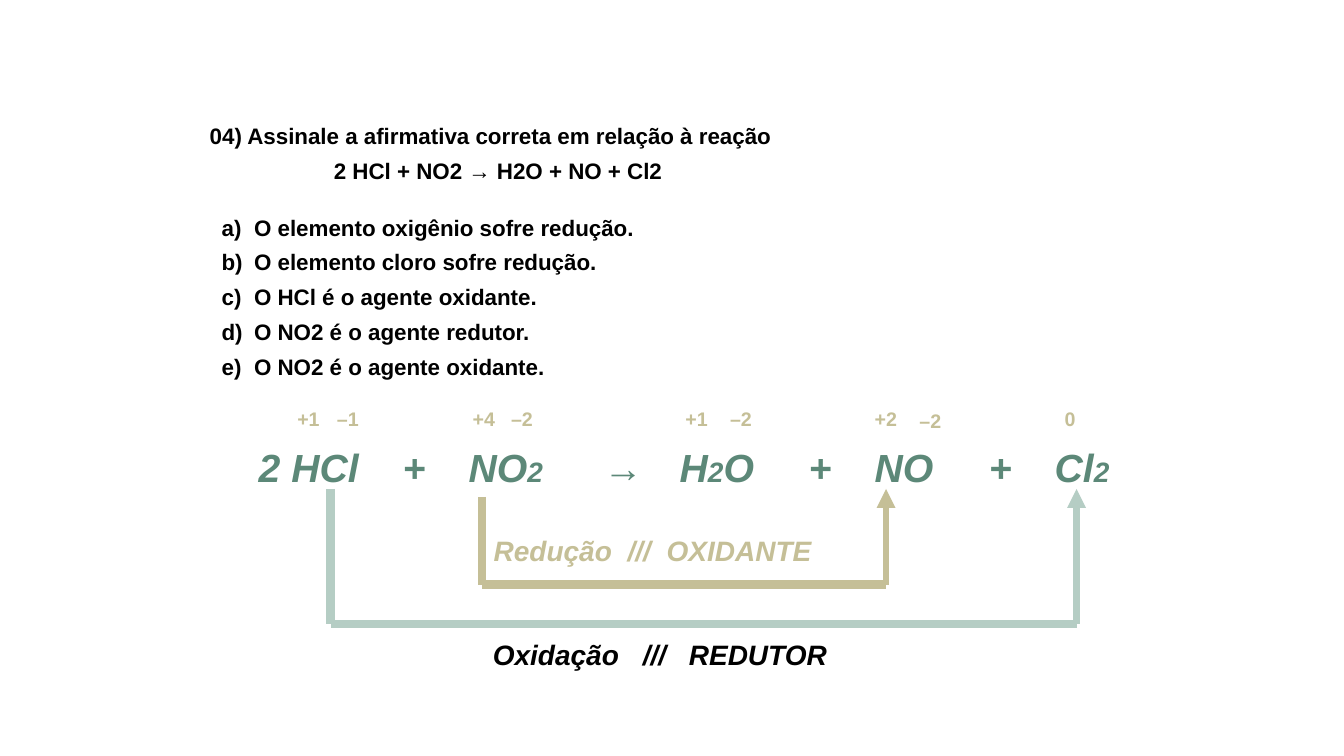
"""Build the redox exercise slide."""
from lxml import etree
from pptx import Presentation
from pptx.dml.color import RGBColor
from pptx.enum.shapes import MSO_CONNECTOR
from pptx.enum.text import MSO_ANCHOR, MSO_AUTO_SIZE, PP_ALIGN
from pptx.oxml.ns import qn
from pptx.util import Cm, Pt

STRAIGHT = MSO_CONNECTOR.STRAIGHT
MIDDLE = MSO_ANCHOR.MIDDLE
FIXED = MSO_AUTO_SIZE.NONE
LEFT, CENTER, JUSTIFY = PP_ALIGN.LEFT, PP_ALIGN.CENTER, PP_ALIGN.JUSTIFY

BLACK, GREEN, MINT, SAND = "000000", "5C8878", "B5CDC4", "C5BF97"

ASK = ["04) Assinale a afirmativa correta em relação à reação",
       "2 HCl + NO2 → H2O + NO + Cl2"]
CHOICES = ["a)\tO elemento oxigênio sofre redução.",
           "b)\tO elemento cloro sofre redução.",
           "c)\tO HCl é o agente oxidante.",
           "d)\tO NO2 é o agente redutor.",
           "e)\tO NO2 é o agente oxidante."]
TERMS = ["2 HCl\t+\tNO", "2", "\t", "→", "\tH", "2",
         "O\t+\tNO\t+\tCl", "2"]
STOPS = [3.63, 5.29, 8.69, 10.61, 13.86, 15.52, 18.4, 20.06]
CHARGES = [("+1", 7.24, 10.13), ("–1", 8.23, 10.13), ("+4", 11.66, 10.13),
           ("–2", 12.62, 10.13), ("+1", 17.02, 10.13), ("–2", 18.14, 10.13),
           ("+2", 21.79, 10.13), ("–2", 22.91, 10.18), ("0", 26.43, 10.13)]


def color(code):
    return RGBColor.from_string(code)


def style(para, size, code, align, space=1.0, italic=False):
    para.alignment = align
    para.line_spacing = space
    para.space_before = Pt(0)
    font = para.font
    font.name, font.size, font.bold, font.italic = "Arial", Pt(size), True, italic
    font.color.rgb = color(code)


def place(shape, left, top, width, height):
    shape.left, shape.top = Cm(left), Cm(top)
    shape.width, shape.height = Cm(width), Cm(height)


def fill_holder(holder, lines, box):
    place(holder, *box)
    frame = holder.text_frame
    frame.text = "\n".join(lines)
    frame.auto_size = FIXED
    frame.vertical_anchor = MIDDLE
    for para in frame.paragraphs:
        style(para, 16, BLACK, JUSTIFY, 1.3)


def indent(para, margin, first):
    props = para._p.get_or_add_pPr()
    props.set("marL", str(Cm(margin)))
    props.set("indent", str(Cm(first)))


def no_bullet(para):
    mark = etree.Element(qn("a:buNone"))
    para._p.pPr.find(qn("a:defRPr")).addprevious(mark)


def add_tabs(para, stops):
    tabs = etree.Element(qn("a:tabLst"))
    for stop in stops:
        etree.SubElement(tabs, qn("a:tab"), pos=str(Cm(stop)), algn="l")
    para._p.pPr.find(qn("a:defRPr")).addprevious(tabs)


def add_text(slide, box, text=""):
    frame = slide.shapes.add_textbox(*map(Cm, box)).text_frame
    frame.word_wrap = False
    para = frame.paragraphs[0]
    if text:
        para.add_run().text = text
    return para


def add_label(slide, box, text, code, stops):
    para = add_text(slide, box, text)
    style(para, 20, code, LEFT, italic=True)
    add_tabs(para, stops)


def add_charge(slide, text, left, top):
    style(add_text(slide, (left, top, 1.07, 0.86), text), 14, SAND, CENTER)


def add_formula(slide):
    para = add_text(slide, (6.27, 10.69, 22.4, 1.65))
    style(para, 28, GREEN, LEFT, 1.3, True)
    add_tabs(para, STOPS)
    for term in TERMS:
        run = para.add_run()
        run.text = term
        if term == "2":
            run.font.size = Pt(20)
        elif term == "→":
            run.font.italic = False


def add_line(slide, start, end, code, width):
    line = slide.shapes.add_connector(STRAIGHT, *map(Cm, start + end))
    line.line.color.rgb = color(code)
    line.line.width = Pt(width)
    etree.SubElement(line._element.spPr, qn("a:effectLst"))
    return line


def add_path(slide, left, right, top, base, tip, code):
    add_line(slide, (left, top), (left, base), code, 6)
    add_line(slide, (left, base), (right, base), code, 6)
    rise = add_line(slide, (right, base), (right, tip), code, 4.5)
    etree.SubElement(rise.line._get_or_add_ln(), qn("a:tailEnd"), type="triangle")


def main():
    deck = Presentation()
    deck.slide_width, deck.slide_height = Cm(33.87), Cm(19.05)
    slide = deck.slides.add_slide(deck.slide_layouts[1])
    title, body = slide.placeholders

    fill_holder(title, ASK, (5.03, 2.79, 24.41, 1.93))
    indent(title.text_frame.paragraphs[1], 3.13, 0)
    fill_holder(body, CHOICES, (5.33, 5.08, 11.05, 4.6))
    for para in body.text_frame.paragraphs:
        indent(para, 0.82, -0.82)
        no_bullet(para)

    add_formula(slide)
    for charge in CHARGES:
        add_charge(slide, *charge)
    add_path(slide, 8.33, 27.13, 12.32, 15.72, 12.32, MINT)
    add_label(slide, (12.17, 15.93, 9, 1.11), "Oxidação\t///\tREDUTOR",
              BLACK, [3.78, 4.94])
    add_path(slide, 12.14, 22.33, 12.52, 14.73, 12.32, SAND)
    add_label(slide, (12.19, 13.33, 8.6, 1.11), "Redução\t///\tOXIDANTE",
              SAND, [3.38, 4.36])
    deck.save("out.pptx")


if __name__ == "__main__":
    main()
